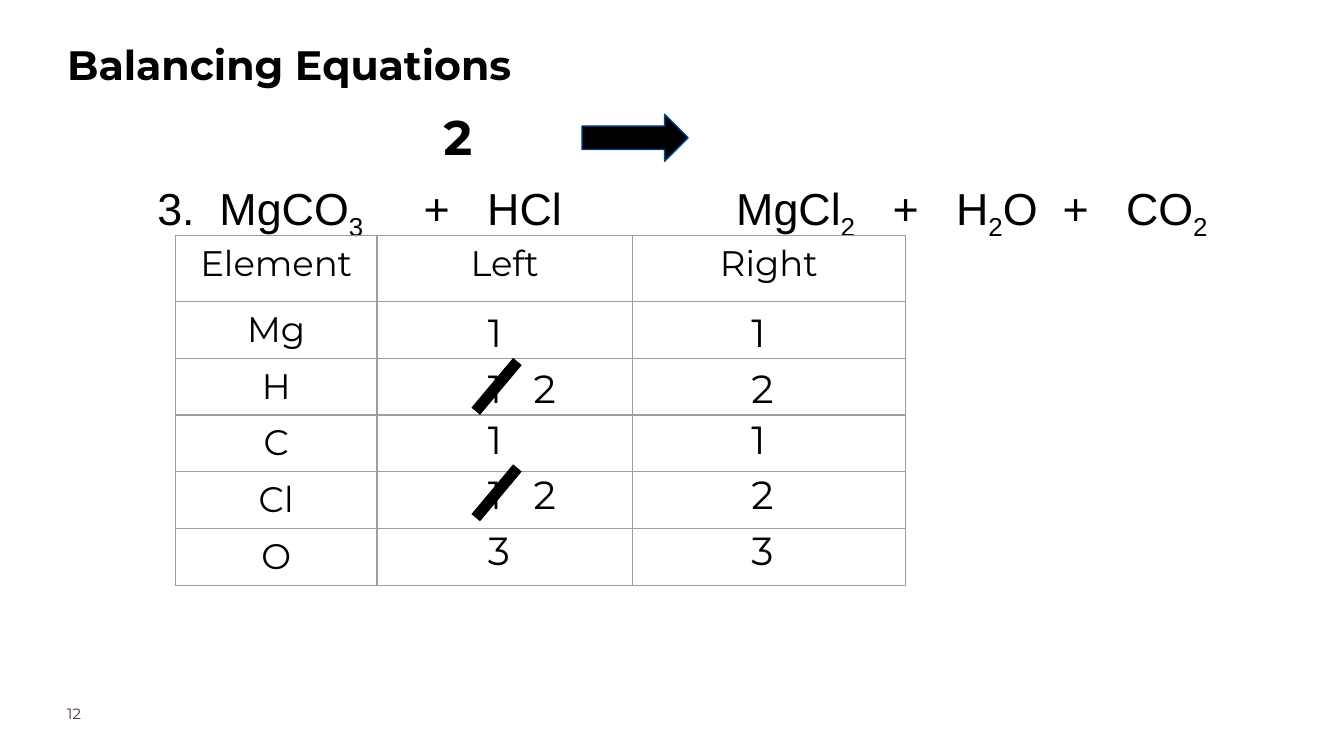
from pptx import Presentation
from pptx.dml.color import RGBColor
from pptx.enum.shapes import MSO_CONNECTOR, MSO_SHAPE
from pptx.enum.text import MSO_ANCHOR, MSO_AUTO_SIZE, PP_ALIGN
from pptx.oxml.ns import qn
from pptx.util import Inches, Pt
from lxml.etree import SubElement

BLACK = RGBColor(0x00, 0x00, 0x00)
NAVY = RGBColor(0x00, 0x46, 0x8C)
PLUM = RGBColor(0x4B, 0x32, 0x41)
GREY = RGBColor(0x9E, 0x9E, 0x9E)


def grid(n):
    """Length of n grid units; the slide is 100 columns by 56.25 rows."""
    return Inches(n / 10)


class Deck:
    FONT = "Montserrat"
    FORMULA_FONT = "Arial"
    FORMULA_SIZE = 24
    SPACE = 6.67  # width of a formula space in points
    INSET = 0.5

    def __init__(self):
        self.prs = Presentation()
        self.prs.slide_width, self.prs.slide_height = grid(100), grid(56.25)
        self.s = self.prs.slides.add_slide(self.prs.slide_layouts[1])

    def run(self, p, text, size, color=BLACK, bold=False, font=FONT):
        r = p.add_run()
        r.text = text
        r.font.name, r.font.size, r.font.bold = font, Pt(size), bold
        r.font.color.rgb = color
        return r

    def formula_run(self, p, text, **attributes):
        r = self.run(p, text, self.FORMULA_SIZE, font=self.FORMULA_FONT)
        for name, value in attributes.items():
            r._r.get_or_add_rPr().set(name, str(value))

    def frame(self, sp, box, insets):
        """Place a shape and return its top-anchored text frame."""
        sp.left, sp.top, sp.width, sp.height = map(grid, box)
        tf = sp.text_frame
        tf.word_wrap = True
        tf.auto_size = MSO_AUTO_SIZE.NONE
        tf.vertical_anchor = MSO_ANCHOR.TOP
        (tf.margin_left, tf.margin_top,
         tf.margin_right, tf.margin_bottom) = map(grid, insets)
        return tf

    def title(self, text, box):
        p = self.frame(self.s.shapes.title, box, [0] * 4).paragraphs[0]
        p.alignment, p.line_spacing = PP_ALIGN.LEFT, 1.15
        self.run(p, text, 22, bold=True)

    def equation(self, terms, box, insets):
        """Set (gap before, formula) terms on one line; "_" marks a subscript digit.

        A gap is one space, widened by letter spacing to that many spaces.
        """
        p = self.frame(self.s.placeholders[1], box, insets).paragraphs[0]
        pPr = p._p.get_or_add_pPr()
        pPr.set("marL", "0")
        pPr.set("indent", "0")
        SubElement(pPr, qn("a:buNone"))
        p.alignment, p.line_spacing, p.space_before = PP_ALIGN.LEFT, 2.35, Pt(0)
        for gap, formula in terms:
            if gap:
                self.formula_run(p, " ", spc=round((gap - 1) * self.SPACE * 100))
            first, *rest = formula.split("_")
            self.formula_run(p, first)
            for part in rest:
                self.formula_run(p, part[0], baseline=-25000)
                if part[1:]:
                    self.formula_run(p, part[1:])

    def text(self, text, box, size, color=BLACK, bold=False, inset=INSET):
        sp = self.s.shapes.add_textbox(0, 0, 0, 0)
        p = self.frame(sp, box, [inset] * 4).paragraphs[0]
        self.run(p, text, size, color, bold)

    def digit(self, text, x, y, size=21, bold=False):
        self.text(text, (x, y, 3.1, 4.7), size, bold=bold)

    def arrow(self, box):
        sp = self.s.shapes.add_shape(MSO_SHAPE.RIGHT_ARROW, *map(grid, box))
        sp.shadow.inherit = False
        sp.fill.solid()
        sp.fill.fore_color.rgb = BLACK
        sp.line.color.rgb, sp.line.width = NAVY, Pt(0.75)

    def strike(self, x, y):
        """Cross out the digit whose box starts at x, y."""
        ends = (x - 0.4, y + 4, x + 2.7, y + 0.3)
        ln = self.s.shapes.add_connector(MSO_CONNECTOR.STRAIGHT, *map(grid, ends))
        ln.line.color.rgb, ln.line.width = BLACK, Pt(6)
        SubElement(ln._element.spPr, qn("a:effectLst"))

    def cell(self, cell, text):
        cell.margin_left = cell.margin_right = grid(self.INSET)
        cell.margin_top = cell.margin_bottom = grid(self.INSET)
        tcPr = cell._tc.get_or_add_tcPr()
        for side in ("lnL", "lnR", "lnT", "lnB"):
            ln = SubElement(tcPr, qn(f"a:{side}"), w=str(Pt(0.75)))
            fill = SubElement(ln, qn("a:solidFill"))
            SubElement(fill, qn("a:srgbClr"), val=str(GREY))
        cell.fill.background()
        if text:
            p = cell.text_frame.paragraphs[0]
            p.alignment = PP_ALIGN.CENTER
            self.run(p, text, 19)

    def table(self, rows, x, y, widths, heights):
        box = map(grid, (x, y, sum(widths), sum(heights)))
        tbl = self.s.shapes.add_table(len(rows), len(widths), *box).table
        tbl.first_row = tbl.horz_banding = False
        for col, w in zip(tbl.columns, widths):
            col.width = grid(w)
        for i, (row, h) in enumerate(zip(rows, heights)):
            tbl.rows[i].height = grid(h)
            for j, text in enumerate(row):
                self.cell(tbl.cell(i, j), text)


def main():
    deck = Deck()
    deck.title("Balancing Equations", (5, 2.4, 62.9, 8.9))
    deck.text("12", (5, 52.43, 7.9, 2), 8, PLUM, inset=0)
    terms = [(0, "3."), (2, "MgCO_3"), (4.85, "+"), (3, "HCl"), (14, "MgCl_2"),
             (3, "+"), (3, "H_2O"), (2, "+"), (3, "CO_2")]
    deck.equation(terms, (8.9, 7.3, 82.3, 8.9), (2.8, 0, 0, 0))
    deck.arrow((43.3, 8.5, 7.9, 3.5))

    # element, left count, right count, corrected left count, top of the counts
    counts = [("Mg", "1", "1", None, 22.45), ("H", "1", "2", "2", 26.6),
              ("C", "1", "1", None, 30.4), ("Cl", "1", "2", "2", 34.52),
              ("O", "3", "3", None, 38.7)]
    rows = [("Element", "Left", "Right")] + [(c[0], "", "") for c in counts]
    deck.table(rows, 13.05, 17.54, (15, 19, 20.3), [4.9] + [4.22] * len(counts))

    left_x, right_x, corrected_x = 35.8, 55.4, 39.2
    for _, left, right, corrected, y in counts:
        deck.digit(left, left_x, y)
        deck.digit(right, right_x, y)
        if corrected:
            deck.strike(left_x, y)
            deck.digit(corrected, corrected_x, y)
    deck.digit("2", 32.5, 7.5, size=26, bold=True)
    deck.prs.save("out.pptx")


if __name__ == "__main__":
    main()
